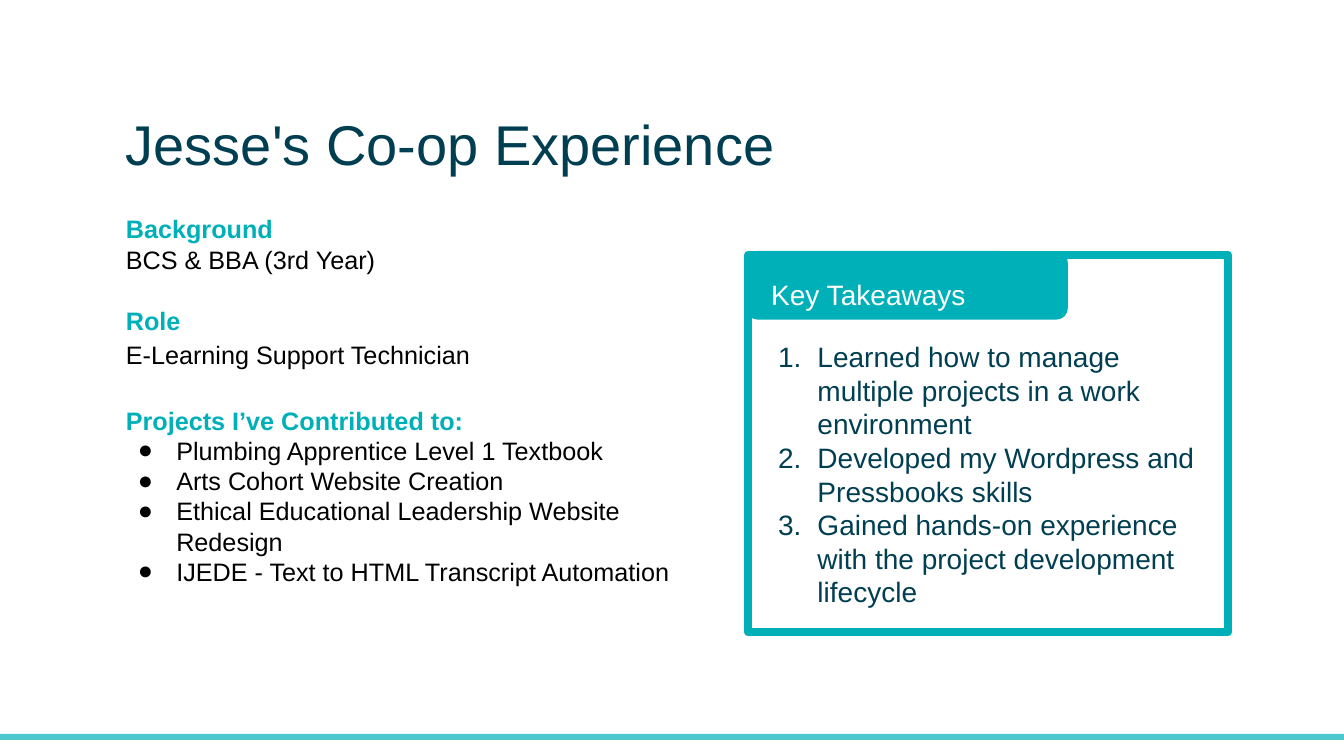
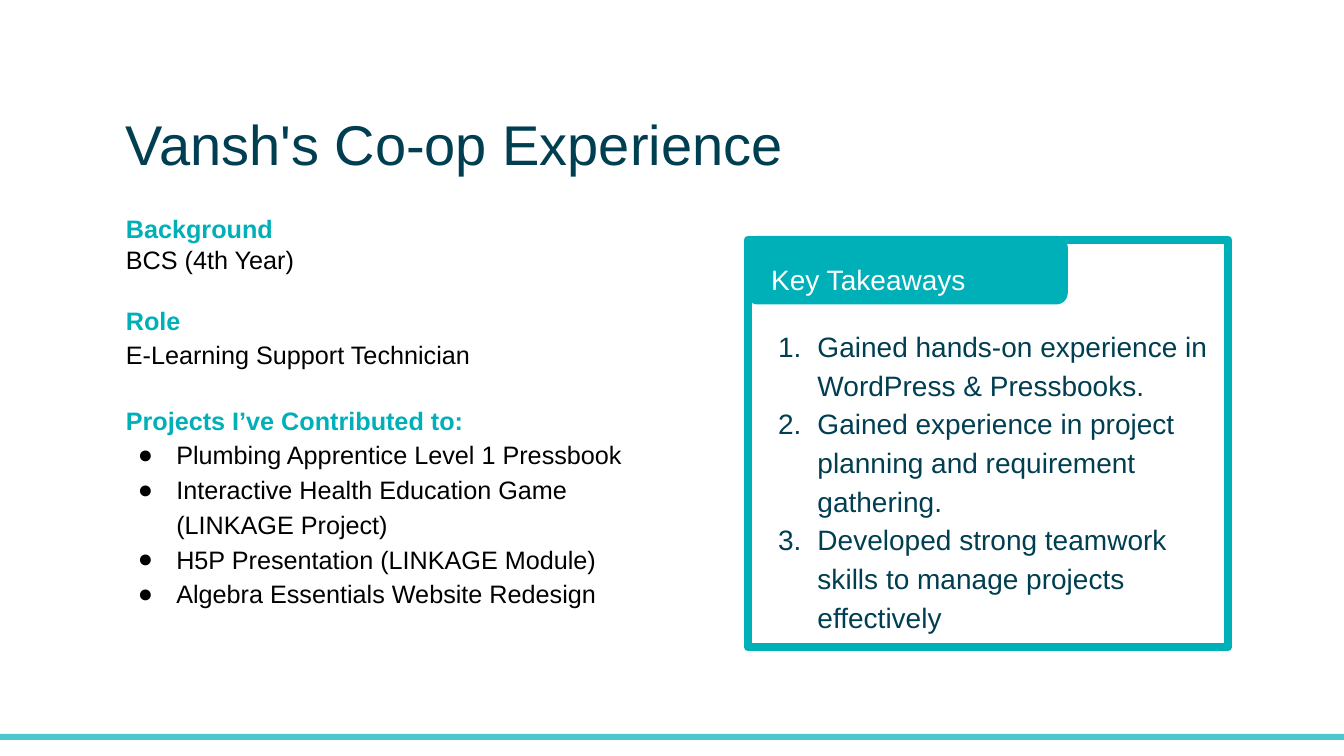
from lxml import etree
from pptx import Presentation
from pptx.dml.color import RGBColor
from pptx.enum.shapes import MSO_SHAPE
from pptx.enum.text import MSO_ANCHOR
from pptx.oxml.ns import qn
from pptx.util import Inches, Pt

RECTANGLE = MSO_SHAPE.RECTANGLE
ROUNDED = MSO_SHAPE.ROUNDED_RECTANGLE
TOP = MSO_ANCHOR.TOP

COLORS = {"teal": "00B0B9", "navy": "003E51", "black": "000000", "white": "FFFFFF"}
FONT = "Arial"
LOOSE = 1.15

FORMATS = {
    "title": {"size": 40, "color": "navy"},
    "heading": {"size": 18, "color": "teal", "bold": True},
    "body": {"size": 18, "color": "black"},
    "label": {"size": 20, "color": "white"},
    "takeaway": {"size": 20, "color": "navy"},
}
BULLET = ("buChar", {"char": "●"}, 0.38)
NUMBER = ("buAutoNum", {"type": "arabicPeriod"}, 0.39)

FRAME_LEFT, FRAME_WIDTH, FRAME_MIDDLE = 7.42, 4.76, 4.4

SLIDES = [
    {
        "name": "Jesse",
        "background": "BCS & BBA (3rd Year)",
        "projects": [
            "Plumbing Apprentice Level 1 Textbook",
            "Arts Cohort Website Creation",
            "Ethical Educational Leadership Website Redesign",
            "IJEDE - Text to HTML Transcript Automation",
        ],
        "takeaways": [
            "Learned how to manage multiple projects in a work environment",
            "Developed my Wordpress and Pressbooks skills",
            "Gained hands-on experience with the project development lifecycle",
        ],
        "list_spacing": 1.0,
        "frame_height": 3.74,
    },
    {
        "name": "Vansh",
        "background": "BCS (4th Year)",
        "projects": [
            "Plumbing Apprentice Level 1 Pressbook",
            "Interactive Health Education Game (LINKAGE Project)",
            "H5P Presentation (LINKAGE Module)",
            "Algebra Essentials Website Redesign",
        ],
        "takeaways": [
            "Gained hands-on experience in WordPress & Pressbooks.",
            "Gained experience in project planning and requirement gathering.",
            "Developed strong teamwork skills to manage projects effectively",
        ],
        "list_spacing": LOOSE,
        "frame_height": 4.04,
    },
]


def rgb(name):
    return RGBColor.from_string(COLORS[name])


def line(text, style, spacing=1.0, before=0, marker=None):
    return {"text": text, "style": style, "spacing": spacing,
            "before": before, "marker": marker}


class Deck:
    def __init__(self):
        self.deck = Presentation()
        self.deck.slide_width = Inches(13.33)
        self.deck.slide_height = Inches(7.5)
        self.page = None

    def new_page(self, title):
        self.page = self.deck.slides.add_slide(self.deck.slide_layouts[6])
        band = self.shape(RECTANGLE, (0, 7.28, 13.33, 0.06), fill="teal")
        color = band.fill._xPr.find(qn("a:solidFill"))[0]
        etree.SubElement(color, qn("a:alpha"), val="70000")
        self.text((1.15, 0.94, 11.02, 0.75), [line(title, "title", LOOSE)])

    def shape(self, kind, place, fill=None, outline=None):
        shape = self.page.shapes.add_shape(kind, *map(Inches, place))
        shape.shadow.inherit = False
        if fill:
            shape.fill.solid()
            shape.fill.fore_color.rgb = rgb(fill)
        else:
            shape.fill.background()
        if outline:
            shape.line.color.rgb = rgb(outline)
            shape.line.width = Pt(6)
        else:
            shape.line.fill.background()
        return shape

    def text(self, place, lines, inset=0.05):
        box = self.page.shapes.add_textbox(*map(Inches, place))
        frame = box.text_frame
        settings = {
            "word_wrap": True, "vertical_anchor": TOP,
            "margin_left": Inches(0.1), "margin_right": Inches(0.1),
            "margin_top": Inches(inset), "margin_bottom": Inches(inset),
        }
        for name, value in settings.items():
            setattr(frame, name, value)
        for index, item in enumerate(lines):
            para = frame.add_paragraph() if index else frame.paragraphs[0]
            self.paragraph(para, item)

    def paragraph(self, para, item):
        style = FORMATS[item["style"]]
        if item["marker"]:
            self.marker(para, item["marker"], style["color"])
        para.line_spacing = item["spacing"]
        if item["before"]:
            para.space_before = Pt(item["before"])
        span = para.add_run()
        span.text = item["text"]
        settings = {"name": FONT, "size": Pt(style["size"]),
                    "bold": style.get("bold", False)}
        for name, value in settings.items():
            setattr(span.font, name, value)
        span.font.color.rgb = rgb(style["color"])

    def marker(self, para, marker, color):
        tag, attributes, hang = marker
        properties = para._p.get_or_add_pPr()
        properties.set("marL", str(Inches(0.5)))
        properties.set("indent", str(-Inches(hang)))
        tint = etree.SubElement(properties, qn("a:buClr"))
        etree.SubElement(tint, qn("a:srgbClr"), val=COLORS[color])
        etree.SubElement(properties, qn("a:buFont"), typeface=FONT)
        etree.SubElement(properties, qn("a:" + tag), attributes)

    def profile(self, background, projects, spacing):
        lines = [
            line("Background", "heading"),
            line(background, "body"),
            line("Role", "heading", before=22),
            line("E-Learning Support Technician", "body", LOOSE),
            line("Projects I’ve Contributed to:", "heading", before=25),
        ]
        lines += [line(project, "body", spacing, marker=BULLET) for project in projects]
        self.text((1.15, 2.07, 5.59, 4.62), lines)

    def takeaways(self, items, spacing, height):
        top = FRAME_MIDDLE - height / 2
        self.shape(RECTANGLE, (FRAME_LEFT, top, FRAME_WIDTH, height), outline="teal")
        self.shape(ROUNDED, (7.4, top - 0.04, 3.19, 0.68), fill="teal")
        self.text((7.55, top + 0.07, 2.95, 0.56),
                  [line("Key Takeaways", "label", LOOSE)], inset=0.1)
        self.text((7.51, top + 0.74, 4.67, height - 0.74),
                  [line(item, "takeaway", spacing, marker=NUMBER) for item in items],
                  inset=0.1)


def main():
    builder = Deck()
    for person in SLIDES:
        spacing = person["list_spacing"]
        builder.new_page(f"{person['name']}'s Co-op Experience")
        builder.profile(person["background"], person["projects"], spacing)
        builder.takeaways(person["takeaways"], spacing, person["frame_height"])
    builder.deck.save("out.pptx")


if __name__ == "__main__":
    main()
